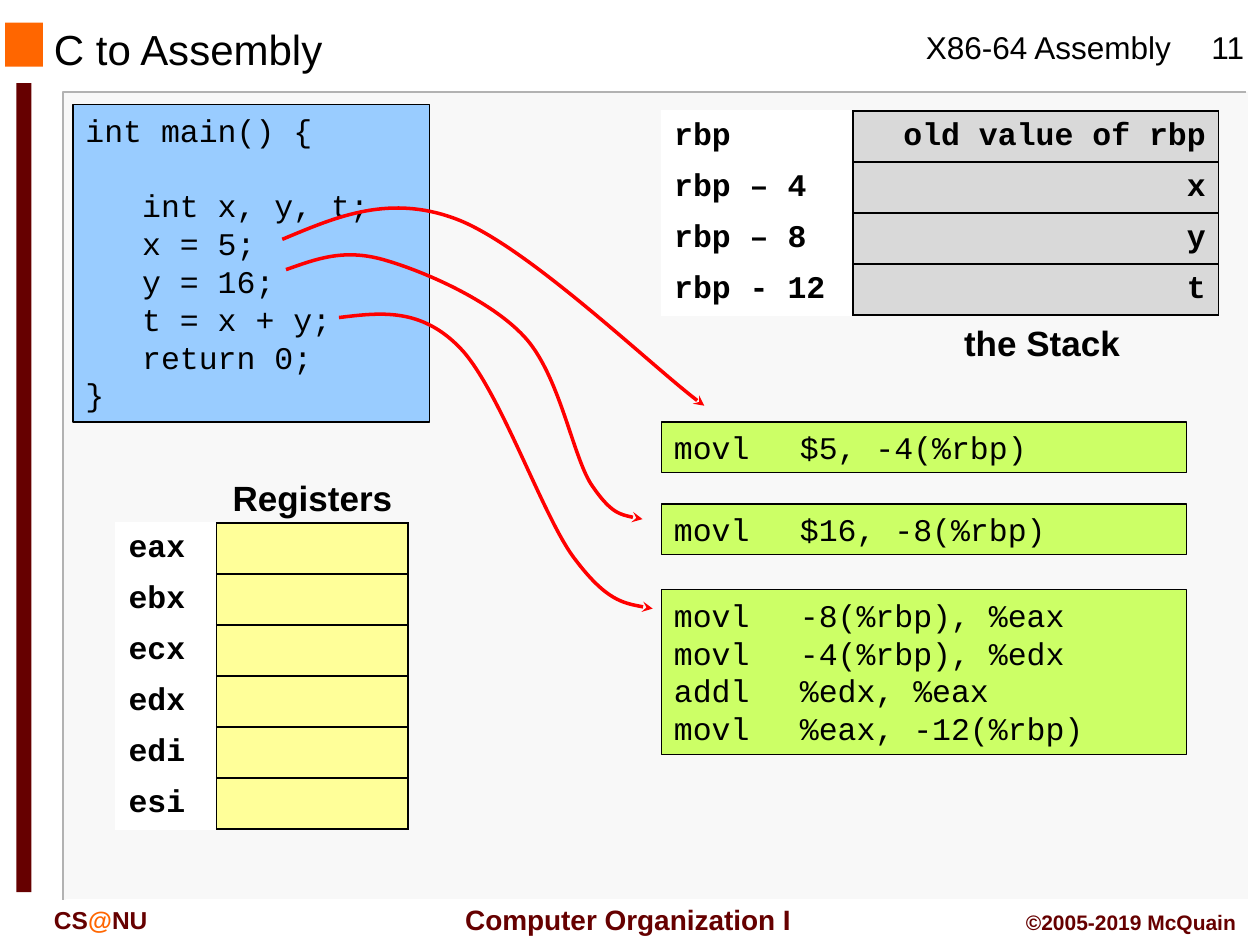
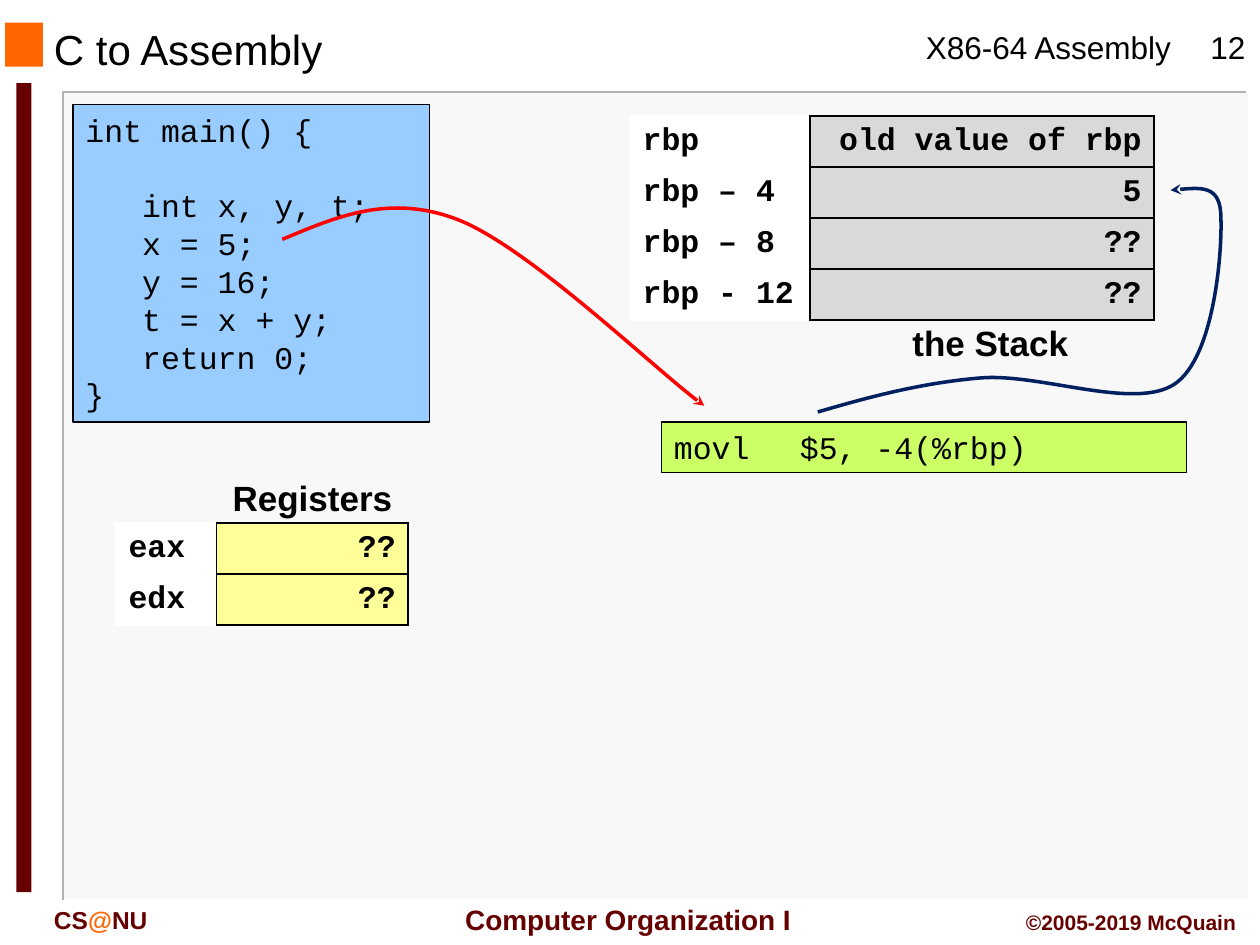
from dataclasses import dataclass

from lxml.etree import SubElement
from pptx import Presentation
from pptx.dml.color import RGBColor
from pptx.enum.shapes import MSO_SHAPE
from pptx.enum.text import MSO_ANCHOR, PP_ALIGN
from pptx.oxml.ns import qn
from pptx.util import Inches, Pt


@dataclass(frozen=True)
class Theme:
    """Colours, fonts and type sizes of the lecture deck."""

    black: str = "000000"
    white: str = "FFFFFF"
    maroon: str = "660000"
    orange: str = "FF6600"
    panel: str = "F8F8F8"
    panel_edge: str = "B2B2B2"
    source_fill: str = "99CCFF"
    assembly_fill: str = "CCFF66"
    stack_fill: str = "D9D9D9"
    register_fill: str = "FFFF99"
    compiles_to: str = "FF0000"
    writes_to: str = "002060"
    sans: str = "Arial"
    mono: str = "Courier New"
    title: int = 24
    caption: int = 20
    body: int = 18
    course: int = 16
    school: int = 14
    rights: int = 12
    code_pitch: float = 21.6


THEME = Theme()
ROW_HEIGHT = 0.405
CODE_INDENT = 0.45

C_SOURCE = ["int main() {", "int x, y, t;", "x = 5;", "y = 16;",
            "t = x + y;", "return 0;", "}"]
STORE_X = ["movl\t$5, -4(%rbp)"]
STORE_Y = ["movl\t$16, -8(%rbp)"]
STORE_SUM = ["movl\t-8(%rbp), %eax", "movl\t-4(%rbp), %edx",
             "addl\t%edx, %eax", "movl\t%eax, -12(%rbp)"]
STACK_SLOTS = ["rbp", "rbp – 4", "rbp – 8", "rbp - 12"]

X_TO_STORE = [(2.24, 1.9), (2.67, 1.72), (3.1, 1.53), (3.65, 1.75),
              (4.21, 1.98), (5.26, 2.99), (5.59, 3.22)]
Y_TO_STORE = [(2.27, 2.14), (2.5, 2.06), (2.72, 1.97), (3.04, 2.06),
              (3.36, 2.15), (3.89, 2.38), (4.16, 2.67),
              (4.44, 2.97), (4.54, 3.6), (4.69, 3.84),
              (4.85, 4.08), (4.98, 4.1), (5.1, 4.12)]
SUM_TO_STORE = [(2.69, 2.52), (3.02, 2.48), (3.34, 2.44), (3.65, 2.76),
                (3.96, 3.08), (4.3, 4.08), (4.55, 4.42),
                (4.81, 4.77), (5, 4.8), (5.18, 4.83)]
STORE_TO_STACK = [(6.49, 3.27), (6.9, 3.15), (7.31, 3.04), (7.78, 3),
                  (8.25, 2.96), (9, 3.26), (9.32, 3.05),
                  (9.64, 2.84), (9.7, 1.99), (9.69, 1.73),
                  (9.69, 1.47), (9.49, 1.49), (9.29, 1.51)]


def rgb(colour):
    """Turn a hex string into a colour."""
    return RGBColor.from_string(colour)


def write(frame, lines, size=THEME.body, colour=THEME.black, font=THEME.sans,
          bold=False, align=PP_ALIGN.LEFT, anchor=MSO_ANCHOR.TOP,
          pitch=None, accent=None):
    """Fill a text frame with formatted lines and return its paragraphs."""
    frame.word_wrap = True
    frame.vertical_anchor = anchor
    for number, line in enumerate(lines):
        paragraph = frame.paragraphs[0] if number == 0 else frame.add_paragraph()
        paragraph.alignment = align
        if pitch:
            paragraph.line_spacing = Pt(pitch)
        for piece in line.partition(accent) if accent else [line]:
            run = paragraph.add_run()
            run.text = piece
            run.font.size = Pt(size)
            run.font.name = font
            run.font.bold = bold
            run.font.color.rgb = rgb(THEME.orange if piece == accent else colour)
    return frame.paragraphs


def add_label(slide, text, left, top, width, height, **style):
    """Place one line of free text."""
    box = slide.shapes.add_textbox(*map(Inches, (left, top, width, height)))
    write(box.text_frame, [text], **style)


def add_block(slide, left, top, width, height, fill, outline=None):
    """Place a flat rectangle."""
    block = slide.shapes.add_shape(
        MSO_SHAPE.RECTANGLE, *map(Inches, (left, top, width, height)))
    block.shadow.inherit = False
    block.fill.solid()
    block.fill.fore_color.rgb = rgb(fill)
    if outline:
        block.line.color.rgb = rgb(outline)
        block.line.width = Pt(0.75)
    else:
        block.line.fill.background()
    return block


def add_code(slide, lines, left, top, width, height, fill):
    """Place a listing in an outlined box and return its paragraphs."""
    listing = add_block(slide, left, top, width, height, fill, THEME.black)
    return write(listing.text_frame, lines, font=THEME.mono,
                 pitch=THEME.code_pitch)


def add_path(slide, points, colour, width):
    """Draw an open, unfilled path through points."""
    corners = [(Inches(x), Inches(y)) for x, y in points]
    builder = slide.shapes.build_freeform(*corners[0])
    builder.add_line_segments(corners[1:], close=False)
    path = builder.convert_to_shape()
    path.shadow.inherit = False
    path.fill.background()
    path.line.color.rgb = rgb(colour)
    path.line.width = Pt(width)
    return path


def add_curved_arrow(slide, points, colour):
    """Draw a chain of cubic curves ending in a stealth arrowhead."""
    arrow = add_path(slide, points, colour, 2)
    segments = list(arrow.element.iter(qn("a:lnTo")))
    outline = segments[0].getparent()
    for first in range(0, len(segments), 3):
        curve = SubElement(outline, qn("a:cubicBezTo"))
        for segment in segments[first:first + 3]:
            curve.append(segment[0])
            outline.remove(segment)
    line = arrow.element.spPr.find(qn("a:ln"))
    SubElement(line, qn("a:tailEnd"), type="stealth")


def add_border(cell, sides):
    """Draw black lines on the given sides of a cell."""
    properties = cell._tc.get_or_add_tcPr()
    for side in sides:
        line = SubElement(properties, qn(f"a:ln{side}"), w=str(Pt(1)))
        fill = SubElement(line, qn("a:solidFill"))
        SubElement(fill, qn("a:srgbClr"), val=THEME.black)


def add_storage(slide, names, values, left, top, widths, fill):
    """Place a table of named storage slots with their values."""
    table = slide.shapes.add_table(
        len(names), 2, Inches(left), Inches(top),
        Inches(sum(widths)), Inches(ROW_HEIGHT * len(names))).table
    table.first_row = table.horz_banding = False
    for column, width in zip(table.columns, widths):
        column.width = Inches(width)
    looks = [("R", THEME.white, PP_ALIGN.LEFT), ("LRTB", fill, PP_ALIGN.RIGHT)]
    for row, texts in enumerate(zip(names, values)):
        table.rows[row].height = Inches(ROW_HEIGHT)
        for column, (text, look) in enumerate(zip(texts, looks)):
            sides, background, align = look
            cell = table.cell(row, column)
            add_border(cell, sides)
            cell.fill.solid()
            cell.fill.fore_color.rgb = rgb(background)
            if text:
                write(cell.text_frame, [text], font=THEME.mono, bold=True,
                      align=align, pitch=THEME.code_pitch)


def add_stack(slide, values, left, top, widths, caption_left):
    """Place the stack table and its caption."""
    add_storage(slide, STACK_SLOTS, values, left, top, widths, THEME.stack_fill)
    add_caption(slide, "the Stack", caption_left, 2.5)


def add_registers(slide, names, value):
    """Place the register table and its caption."""
    add_storage(slide, names, [value] * len(names), 0.92, 4.15, (0.8, 1.52),
                THEME.register_fill)
    add_caption(slide, "Registers", 1.5, 3.73)


def add_caption(slide, text, left, top):
    """Place the bold caption of a table."""
    add_label(slide, text, left, top, 1.96, 0.44, size=THEME.caption,
              bold=True, align=PP_ALIGN.CENTER)


def add_source(slide):
    """Place the C program with its body indented."""
    lines = add_code(slide, C_SOURCE, 0.58, 0.83, 2.83, 2.52, THEME.source_fill)
    for line in lines[1:-1]:
        line._p.get_or_add_pPr().set("marL", str(Inches(CODE_INDENT)))
    lines[1].space_before = Pt(THEME.code_pitch)


def add_assembly(slide, lines, top, height=0.4):
    """Place a box of assembly instructions."""
    add_code(slide, lines, 5.25, top, 4.17, height, THEME.assembly_fill)


def start_slide(deck, number):
    """Add a slide with the shared panel, bands, title and footers."""
    slide = deck.slides.add_slide(deck.slide_layouts[6])
    add_block(slide, 0.51, 0.73, 9.4, 6.41, THEME.panel)
    add_path(slide, [(9.89, 0.73), (0.5, 0.73), (0.5, 7.14)],
             THEME.panel_edge, 1)
    add_path(slide, [(9.91, 0.73), (9.91, 7.14), (0.52, 7.14)], THEME.white, 1)
    add_block(slide, 0.04, 0.18, 0.3, 0.35, THEME.orange)
    add_block(slide, 0.13, 0.66, 0.12, 6.42, THEME.maroon)
    add_label(slide, "X86-64 Assembly", 7.25, 0.17, 2.17, 0.4)
    add_label(slide, str(number), 9.41, 0.17, 0.67, 0.4, align=PP_ALIGN.CENTER)
    add_label(slide, "C to Assembly", 0.33, 0.2, 6.33, 0.38,
              size=THEME.title, anchor=MSO_ANCHOR.MIDDLE)
    footer = {"colour": THEME.maroon, "bold": True}
    add_label(slide, "CS@NU", 0.33, 7.13, 1.5, 0.33, size=THEME.school,
              accent="@", **footer)
    add_label(slide, "Computer Organization I", 3.53, 7.11, 2.91, 0.37,
              size=THEME.course, align=PP_ALIGN.CENTER,
              anchor=MSO_ANCHOR.MIDDLE, **footer)
    add_label(slide, "©2005-2019 McQuain", 7.83, 7.17, 2.08, 0.3,
              size=THEME.rights, align=PP_ALIGN.RIGHT, **footer)
    add_source(slide)
    add_assembly(slide, STORE_X, 3.35)
    add_curved_arrow(slide, X_TO_STORE, THEME.compiles_to)
    return slide


def build_translation(deck):
    """Show every C statement with its assembly."""
    slide = start_slide(deck, 11)
    add_assembly(slide, STORE_Y, 4)
    add_assembly(slide, STORE_SUM, 4.68, 1.31)
    for route in (Y_TO_STORE, SUM_TO_STORE):
        add_curved_arrow(slide, route, THEME.compiles_to)
    add_stack(slide, ["old value of rbp", "x", "y", "t"], 5.25, 0.88,
              (1.52, 2.9), 7.29)
    add_registers(slide, ["eax", "ebx", "ecx", "edx", "edi", "esi"], "")


def build_first_store(deck):
    """Show the first instruction writing to the stack."""
    slide = start_slide(deck, 12)
    add_stack(slide, ["old value of rbp", "5", "??", "??"], 5, 0.92,
              (1.43, 2.73), 6.88)
    add_registers(slide, ["eax", "edx"], "??")
    add_curved_arrow(slide, STORE_TO_STACK, THEME.writes_to)


def main():
    """Build and save the deck."""
    deck = Presentation()
    deck.slide_width = Inches(10)
    deck.slide_height = Inches(7.5)
    build_translation(deck)
    build_first_store(deck)
    deck.save("out.pptx")


if __name__ == "__main__":
    main()
